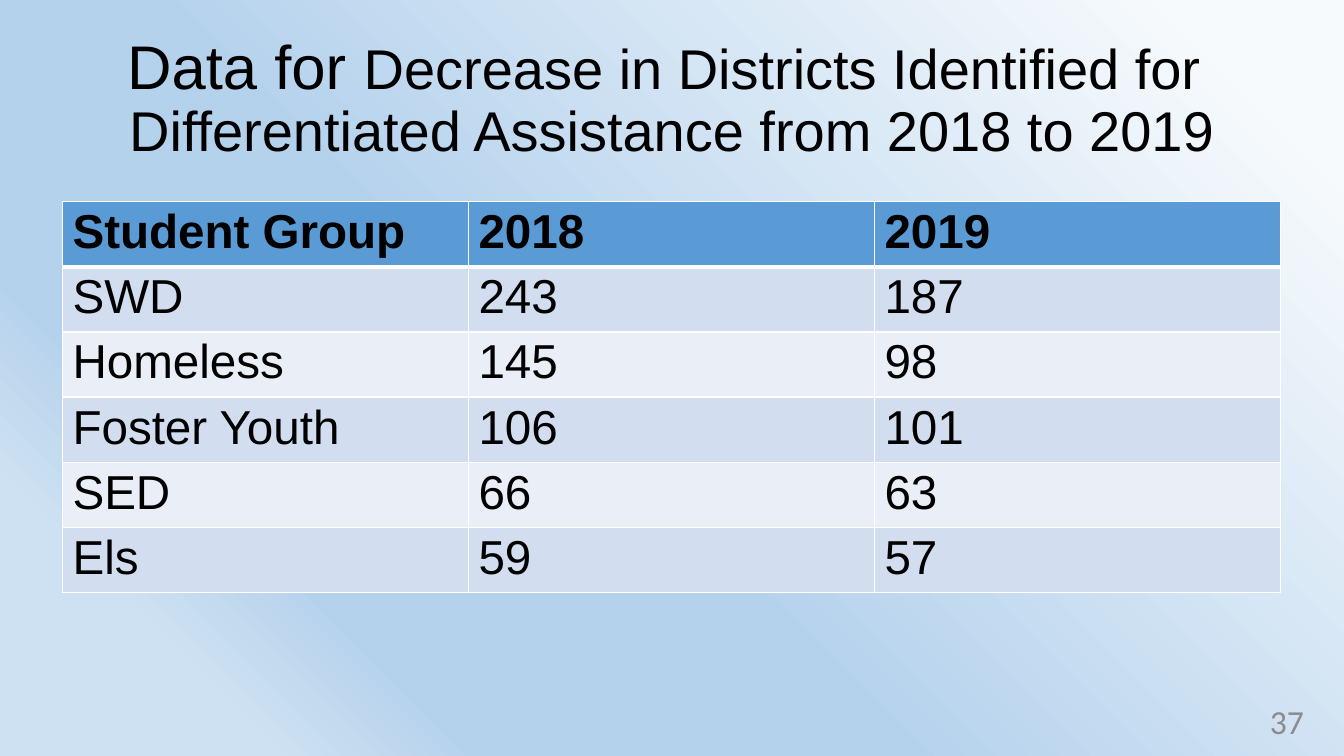
from lxml import etree
from pptx import Presentation
from pptx.dml.color import RGBColor
from pptx.enum.text import MSO_ANCHOR as Anchor, PP_ALIGN as Align
from pptx.oxml.ns import qn
from pptx.util import Inches, Pt

COLORS = {
    "text": "000000",
    "number": "8C8C8C",
    "header": "5B9BD5",
    "odd_row": "D2DEEF",
    "even_row": "EAEFF7",
    "border": "FFFFFF",
}
BACKGROUND_STOPS = [(8, "F7FAFD"), (57, "B5D2EC"), (77, "B5D2EC"), (87, "CEE1F2")]
DISTRICTS = [
    ("Student Group", "2018", "2019"),
    ("SWD", "243", "187"),
    ("Homeless", "145", "98"),
    ("Foster Youth", "106", "101"),
    ("SED", "66", "63"),
    ("Els", "59", "57"),
]


def format_run(run, size, color="text", font="Arial", bold=False):
    run.font.size = Pt(size)
    run.font.name = font
    run.font.bold = bold
    run.font.color.rgb = RGBColor.from_string(COLORS[color])


def set_background(slide):
    fill = slide.background.fill
    fill.gradient()
    fill.gradient_angle = 225
    stop_list = next(slide.background._cSld.iter(qn("a:gsLst")))
    for stop in list(stop_list):
        stop_list.remove(stop)
    for percent, color in BACKGROUND_STOPS:
        stop = etree.SubElement(stop_list, qn("a:gs"), pos=str(percent * 1000))
        etree.SubElement(stop, qn("a:srgbClr"), val=color)


def add_text(slide, left, top, width, height, align):
    """Add an empty, vertically centred text box and return its paragraph."""
    box = slide.shapes.add_textbox(
        Inches(left), Inches(top), Inches(width), Inches(height))
    frame = box.text_frame
    frame.word_wrap = True
    frame.vertical_anchor = Anchor.MIDDLE
    paragraph = frame.paragraphs[0]
    paragraph.alignment = align
    return paragraph


def add_title(slide):
    paragraph = add_text(slide, 0.45, 0.18, 12.42, 1.62, Align.CENTER)
    paragraph.line_spacing = 0.9
    paragraph.text = ("Data for \vDecrease in Districts Identified for "
                      "\vDifferentiated Assistance from 2018 to 2019")
    first_break = paragraph._p.find(qn("a:br"))
    paragraph._p.remove(first_break)
    for run, size in zip(paragraph.runs, (44, 40, 40)):
        format_run(run, size)


def set_borders(cell, bottom_width):
    properties = cell._tc.get_or_add_tcPr()
    widths = {"a:lnL": 1, "a:lnR": 1, "a:lnT": 1, "a:lnB": bottom_width}
    for index, (side, width) in enumerate(widths.items()):
        line = etree.Element(qn(side), w=str(Pt(width)))
        fill = etree.SubElement(line, qn("a:solidFill"))
        etree.SubElement(fill, qn("a:srgbClr"), val=COLORS["border"])
        properties.insert(index, line)


def fill_cell(cell, text, row_index):
    is_header = row_index == 0
    row_color = "odd_row" if row_index % 2 else "even_row"
    cell.text = text
    cell.margin_top = cell.margin_bottom = Inches(0.04)
    format_run(cell.text_frame.paragraphs[0].runs[0], 34, bold=is_header)
    cell.fill.solid()
    cell.fill.fore_color.rgb = RGBColor.from_string(
        COLORS["header" if is_header else row_color])
    set_borders(cell, 3 if is_header else 1)
    if row_index == 1:
        cell._tc.tcPr.find(qn("a:lnT")).set("w", str(Pt(3)))


def add_district_table(slide):
    table = slide.shapes.add_table(
        len(DISTRICTS), len(DISTRICTS[0]),
        Inches(0.62), Inches(2), Inches(12.08), Inches(3.76)).table
    for row_index, values in enumerate(DISTRICTS):
        for column_index, text in enumerate(values):
            fill_cell(table.cell(row_index, column_index), text, row_index)


def add_slide_number(slide):
    paragraph = add_text(slide, 10.03, 6.95, 3, 0.4, Align.RIGHT)
    paragraph.text = "37"
    format_run(paragraph.runs[0], 24, "number", "Calibri")


def main():
    presentation = Presentation()
    presentation.slide_width = Inches(13.33)
    presentation.slide_height = Inches(7.5)
    slide = presentation.slides.add_slide(presentation.slide_layouts[6])
    set_background(slide)
    add_title(slide)
    add_district_table(slide)
    add_slide_number(slide)
    presentation.save("out.pptx")


if __name__ == "__main__":
    main()
